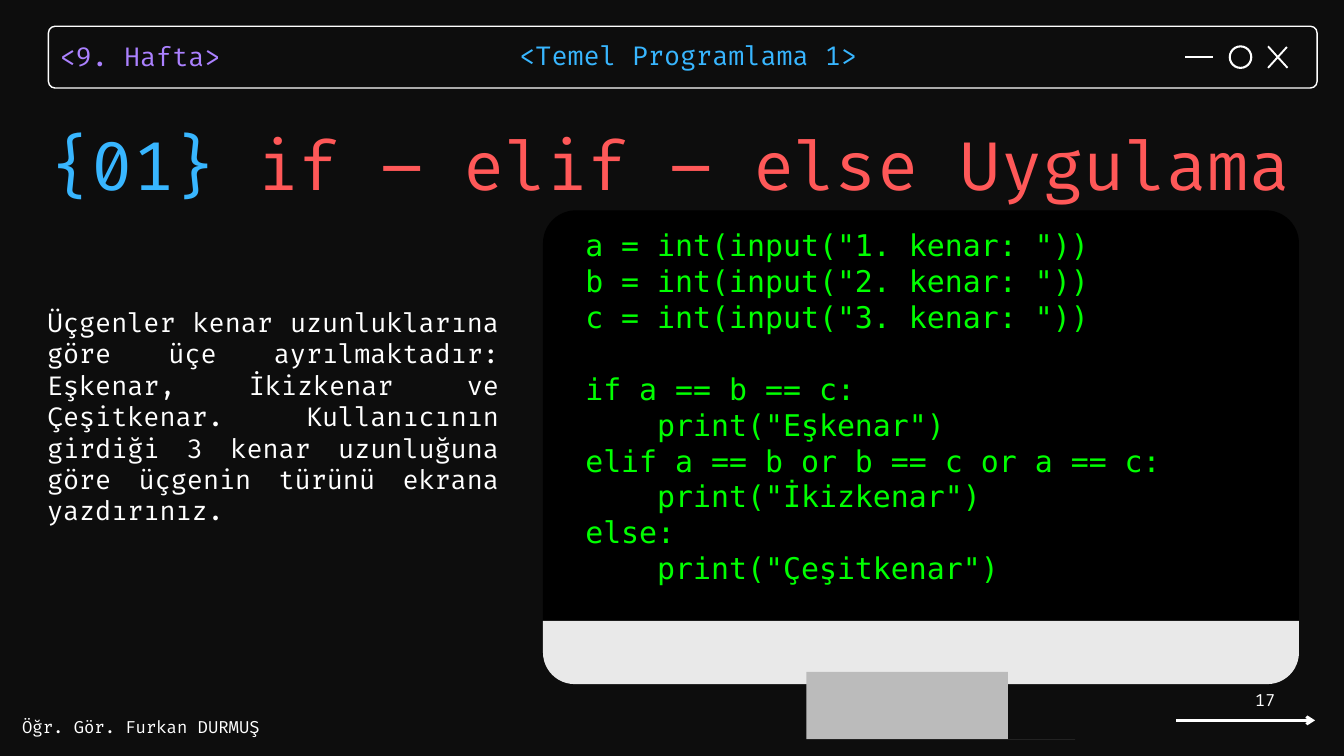
"""Build the slide about the if – elif – else triangle exercise."""
import pptx
import pptx.dml.color
import pptx.enum.shapes
import pptx.enum.text
import pptx.util
from lxml import etree
from pptx.oxml.ns import qn

Inches, Pt = pptx.util.Inches, pptx.util.Pt
SHAPE = pptx.enum.shapes.MSO_SHAPE
ALIGN = pptx.enum.text.PP_ALIGN
ANCHOR = pptx.enum.text.MSO_ANCHOR

WHITE, BLACK, BLUE, RED = "FFFFFF", "000000", "38B6FF", "FF5858"
PURPLE, GREEN, BACKDROP = "AB81FF", "00FF00", "0D0D0D"
BODY_FONT, CODE_FONT = "Fira Code", "DejaVu Sans Mono"

TITLE = [("{01} ", BLUE), ("if – elif – else Uygulama", RED)]
EXERCISE = (
    "Üçgenler kenar uzunluklarına göre üçe ayrılmaktadır: Eşkenar, İkizkenar ve "
    "Çeşitkenar. Kullanıcının girdiği 3 kenar uzunluğuna göre üçgenin türünü "
    "ekrana yazdırınız."
)
CODE_BLOCKS = [
    [
        'a = int(input("1. kenar: "))',
        'b = int(input("2. kenar: "))',
        'c = int(input("3. kenar: "))',
    ],
    [
        "if a == b == c:",
        '    print("Eşkenar")',
        "elif a == b or b == c or a == c:",
        '    print("İkizkenar")',
        "else:",
        '    print("Çeşitkenar")',
    ],
]
CODE_PITCH = 38.4

WINDOW_BUTTON_LINES = [
    (18.87, 0.69, 19.16, 1.01),
    (19.15, 0.7, 18.87, 1.01),
    (17.64, 0.85, 18.05, 0.85),
]
STAND_CENTRE = 13.7
STAND_CURVES = [
    [(1.28, 10.18), (1.28, 10.18), (1.32, 10.68), (1.36, 10.89)],
    [(1.36, 10.89), (1.43, 11.25), (1.83, 11.13), (1.95, 11.21)],
    [(1.95, 11.21), (1.97, 11.22), (1.96, 11.24), (1.94, 11.24)],
]


def rgb(colour):
    return pptx.dml.color.RGBColor.from_string(colour)


def paint(shape, fill=None, line=None, width=1):
    shape.shadow.inherit = False
    if fill:
        shape.fill.solid()
        shape.fill.fore_color.rgb = rgb(fill)
    else:
        shape.fill.background()
    if line:
        shape.line.color.rgb = rgb(line)
        shape.line.width = Pt(width)
    else:
        shape.line.fill.background()


def add_panel(slide, kind, box, adjustments=(), **style):
    panel = slide.shapes.add_shape(kind, *map(Inches, box))
    for index, value in enumerate(adjustments):
        panel.adjustments[index] = value
    paint(panel, **style)


def add_line(slide, ends, width, arrow=False):
    connector = slide.shapes.add_connector(
        pptx.enum.shapes.MSO_CONNECTOR.STRAIGHT, *map(Inches, ends)
    )
    connector.line.color.rgb = rgb(WHITE)
    connector.line.width = Pt(width)
    if arrow:
        etree.SubElement(connector.line._get_or_add_ln(), qn("a:tailEnd"), type="arrow")
    etree.SubElement(connector._element.spPr, qn("a:effectLst"))


def add_text(slide, box, paragraphs, size, font=BODY_FONT, align=ALIGN.LEFT,
             pitch=None, anchor=ANCHOR.TOP, inset=0):
    frame = slide.shapes.add_textbox(*map(Inches, box)).text_frame
    frame.word_wrap = True
    frame.vertical_anchor = anchor
    frame.margin_left = frame.margin_right = Inches(inset)
    frame.margin_top = frame.margin_bottom = Inches(inset / 2)
    for index, (runs, gap) in enumerate(paragraphs):
        paragraph = frame.add_paragraph() if index else frame.paragraphs[0]
        paragraph.alignment = align
        if pitch:
            paragraph.line_spacing = Pt(pitch)
        if gap:
            paragraph.space_before = Pt(gap)
        for words, colour in runs:
            run = paragraph.add_run()
            run.text = words
            run.font.name = font
            run.font.size = Pt(size)
            run.font.color.rgb = rgb(colour)


def add_label(slide, box, words, size, colour=WHITE, **layout):
    add_text(slide, box, [([(words, colour)], 0)], size, **layout)


def bezier(points, steps=10):
    for step in range(steps + 1):
        t = step / steps
        weights = ((1 - t) ** 3, 3 * t * (1 - t) ** 2, 3 * t * t * (1 - t), t ** 3)
        yield tuple(sum(w * p[axis] for w, p in zip(weights, points)) for axis in (0, 1))


def add_stand(slide):
    profile = [point for curve in STAND_CURVES for point in bezier(curve)]
    outline = [(STAND_CENTRE + x, y) for x, y in profile]
    outline += [(STAND_CENTRE - x, y) for x, y in reversed(profile)]
    builder = slide.shapes.build_freeform(*outline[0], scale=Inches(1))
    builder.add_line_segments(outline[1:], close=True)
    paint(builder.convert_to_shape(), fill="BBBBBB")


def add_header(slide):
    add_label(slide, (0.89, 0.52, 3.4, 0.53), "<9. Hafta>", 28, PURPLE, pitch=39.2)
    add_panel(slide, SHAPE.ROUNDED_RECTANGLE, (0.72, 0.39, 18.88, 0.92), [0.11],
              line=WHITE, width=1.5)
    for ends in WINDOW_BUTTON_LINES:
        add_line(slide, ends, 2)
    add_panel(slide, SHAPE.OVAL, (18.3, 0.69, 0.32, 0.32), line=WHITE, width=2.25)
    add_label(slide, (7.73, 0.51, 5.29, 0.53), "<Temel Programlama 1>", 28, BLUE, pitch=39.2)


def add_monitor(slide):
    add_panel(slide, SHAPE.ROUND_2_SAME_RECTANGLE, (8.08, 3.13, 11.25, 6.11), [0.08, 0],
              fill=BLACK)
    add_panel(slide, SHAPE.ROUND_2_SAME_RECTANGLE, (8.08, 9.24, 11.25, 0.94), [0, 0.5],
              fill="E9E9E9")
    add_stand(slide)
    add_panel(slide, SHAPE.RECTANGLE, (8.57, 3.49, 10.34, 5.44), fill=BLACK, line=BLACK, width=2)
    code = [
        ([(words, GREEN)], CODE_PITCH if block and not row else 0)
        for block, lines in enumerate(CODE_BLOCKS)
        for row, words in enumerate(lines)
    ]
    add_text(slide, (8.71, 3.38, 9.84, 5.39), code, 32, font=CODE_FONT, pitch=CODE_PITCH)


def main():
    deck = pptx.Presentation()
    deck.slide_width, deck.slide_height = Inches(20), Inches(11.25)
    slide = deck.slides.add_slide(deck.slide_layouts[6])
    slide.background.fill.solid()
    slide.background.fill.fore_color.rgb = rgb(BACKDROP)
    add_header(slide)
    add_line(slide, (17.5, 10.72, 19.57, 10.72), 3, arrow=True)
    add_label(slide, (0.33, 10.67, 3.67, 0.3), "Öğr. Gör. Furkan DURMUŞ", 18)
    add_label(slide, (0.7, 4.56, 6.72, 3.3), EXERCISE, 28, align=ALIGN.JUSTIFY)
    add_label(slide, (16.75, 10.21, 2.33, 0.4), "17", 18, align=ALIGN.RIGHT,
              anchor=ANCHOR.MIDDLE, inset=0.1)
    add_text(slide, (0.75, 1.61, 19.25, 1.41), [(TITLE, 0)], 72, pitch=102.6)
    add_monitor(slide)
    deck.save("out.pptx")


if __name__ == "__main__":
    main()
